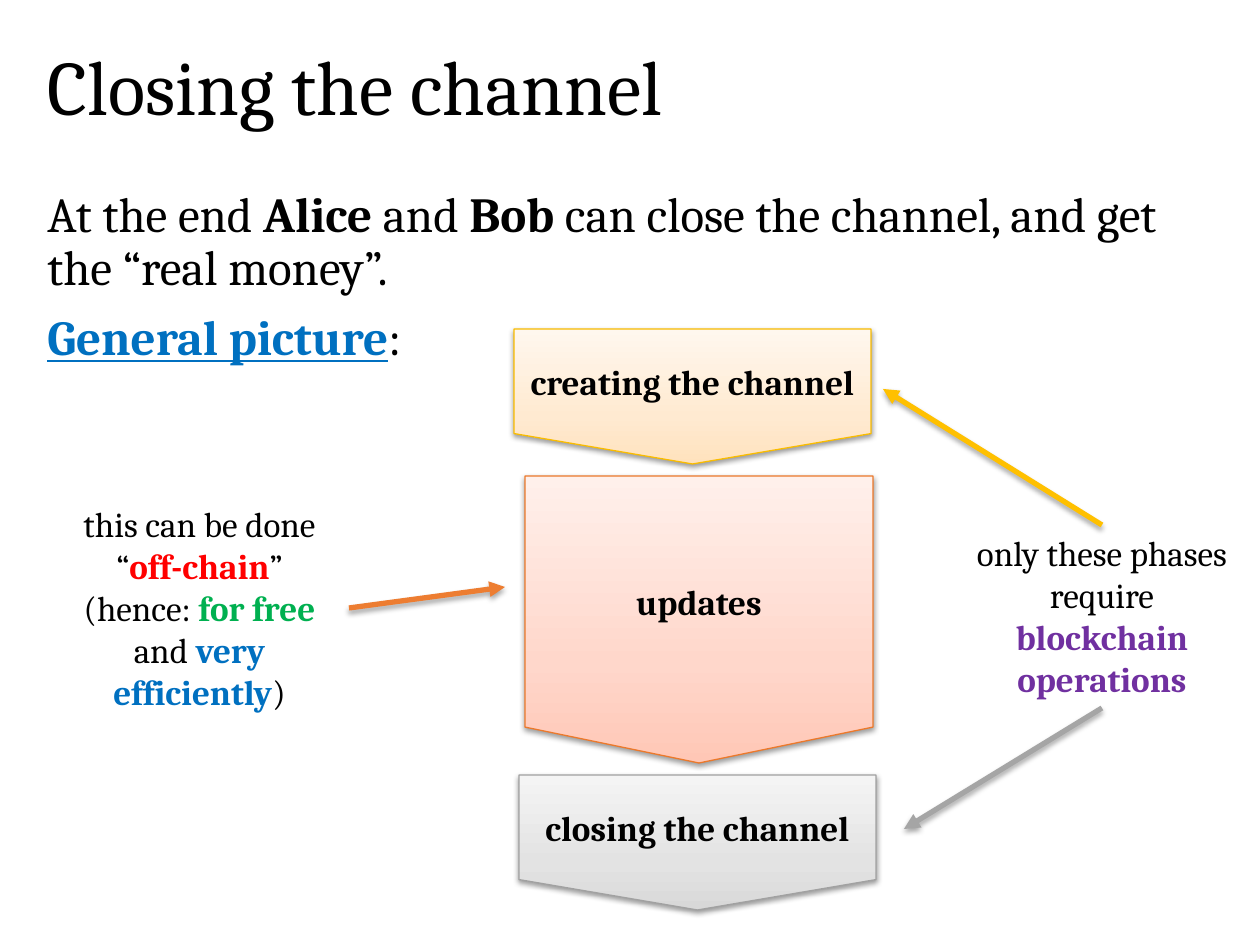
import pptx
import pptx.dml.color
import pptx.enum.shapes
import pptx.enum.text
import pptx.util
from pptx.oxml import parse_xml
from pptx.oxml.ns import nsdecls, qn
from lxml import etree

RGBColor = pptx.dml.color.RGBColor
PP_ALIGN = pptx.enum.text.PP_ALIGN
MSO_ANCHOR = pptx.enum.text.MSO_ANCHOR

FONT = "Cambria"
BLACK = RGBColor(0x00, 0x00, 0x00)
BLUE = RGBColor(0x00, 0x70, 0xC0)
RED = RGBColor(0xFF, 0x00, 0x00)
GREEN = RGBColor(0x00, 0xB0, 0x50)
PURPLE = RGBColor(0x70, 0x30, 0xA0)
GOLD = RGBColor(0xFF, 0xC0, 0x00)
ORANGE = RGBColor(0xED, 0x7D, 0x31)
GRAY = RGBColor(0xA5, 0xA5, 0xA5)
GOLD_EDGE = RGBColor(0xF9, 0xBC, 0x00)
ORANGE_EDGE = RGBColor(0xEC, 0x79, 0x2B)
GRAY_EDGE = RGBColor(0xA1, 0xA1, 0xA1)
GOLD_TINTS = [RGBColor(0xFF, 0xE2, 0xBD), RGBColor(0xFF, 0xEA, 0xD1), RGBColor(0xFF, 0xF7, 0xEE)]
ORANGE_TINTS = [RGBColor(0xFF, 0xC7, 0xB6), RGBColor(0xFF, 0xD7, 0xCB), RGBColor(0xFF, 0xF0, 0xEB)]
GRAY_TINTS = [RGBColor(0xD8, 0xD8, 0xD8), RGBColor(0xE3, 0xE3, 0xE3), RGBColor(0xF4, 0xF4, 0xF4)]
TINT_STOPS = [0, 35, 100]


def px(length):
    return round(length * 914400 / 126)


def write_runs(paragraph, parts, size):
    """Each part is (text, color); coloured and bold parts pass bold as a third item."""
    for text, color, *bold in parts:
        run = paragraph.add_run()
        run.text = text
        run.font.name = FONT
        run.font.size = pptx.util.Pt(size)
        run.font.bold = bool(bold)
        run.font.color.rgb = color


def add_text(slide, box, paragraphs, size, align=PP_ALIGN.LEFT, anchor=MSO_ANCHOR.TOP,
             line_spacing=1.0, space_before=0):
    shape = slide.shapes.add_textbox(*map(px, box))
    text_frame = shape.text_frame
    text_frame.word_wrap = True
    text_frame.vertical_anchor = anchor
    for index, parts in enumerate(paragraphs):
        paragraph = text_frame.add_paragraph() if index else text_frame.paragraphs[0]
        paragraph.alignment = align
        paragraph.line_spacing = line_spacing
        paragraph.space_before = pptx.util.Pt(space_before if index else 0)
        write_runs(paragraph, parts, size)
    return shape


def add_shadow(shape, distance, opacity):
    shape._element.spPr.append(parse_xml(
        f'<a:effectLst {nsdecls("a")}>'
        f'<a:outerShdw blurRad="{pptx.util.Pt(3.1)}" dist="{pptx.util.Pt(distance)}"'
        f' dir="5400000" rotWithShape="0">'
        f'<a:srgbClr val="000000"><a:alpha val="{opacity * 1000}"/></a:srgbClr>'
        f'</a:outerShdw></a:effectLst>'))


def fill_upward(shape, tints):
    """Three-stop gradient that runs from the bottom edge to the top."""
    shape.fill.gradient()
    gradient = shape._element.spPr.find(qn("a:gradFill"))
    stops = gradient.find(qn("a:gsLst"))
    for stop in list(stops):
        stops.remove(stop)
    for position, tint in zip(TINT_STOPS, tints):
        stop = etree.SubElement(stops, qn("a:gs"), pos=str(position * 1000))
        etree.SubElement(stop, qn("a:srgbClr"), val=str(tint))
    gradient.find(qn("a:lin")).set("ang", "16200000")


def add_phase(slide, box, label, tints, edge, head):
    shape = slide.shapes.add_shape(pptx.enum.shapes.MSO_SHAPE.DOWN_ARROW, *map(px, box))
    shape.adjustments[0] = 1
    shape.adjustments[1] = head
    fill_upward(shape, tints)
    shape.line.color.rgb = edge
    shape.line.width = pptx.util.Pt(0.75)
    add_shadow(shape, 1.6, 38)
    text_frame = shape.text_frame
    text_frame.word_wrap = True
    text_frame.vertical_anchor = MSO_ANCHOR.MIDDLE
    paragraph = text_frame.paragraphs[0]
    paragraph.alignment = PP_ALIGN.CENTER
    write_runs(paragraph, [(label, BLACK, True)], 20)


def add_arrow(slide, start, end, color):
    connector = slide.shapes.add_connector(
        pptx.enum.shapes.MSO_CONNECTOR.STRAIGHT, *map(px, start + end))
    connector.line.color.rgb = color
    connector.line.width = pptx.util.Pt(3)
    etree.SubElement(connector.line._get_or_add_ln(), qn("a:tailEnd"), type="triangle")
    add_shadow(connector, 1.8, 35)


def add_title(slide, box):
    add_text(slide, box, [[("Closing the channel", BLACK)]], 44,
             anchor=MSO_ANCHOR.MIDDLE, line_spacing=0.9)


def add_introduction(slide, box):
    shape = add_text(slide, box, [
        [("At the end ", BLACK), ("Alice", BLACK, True), (" and ", BLACK), ("Bob", BLACK, True),
         (" can close the channel, and get the “real money”.", BLACK)],
        [("General picture", BLUE, True), (":", BLACK)],
    ], 28, line_spacing=0.9, space_before=10)
    shape.text_frame.paragraphs[1].runs[0].font.underline = True


def add_phases(slide, box):
    left, top, _, _ = box
    add_phase(slide, (left, top, 357, 135), "creating the channel", GOLD_TINTS, GOLD_EDGE, 0.225)
    add_phase(slide, (left + 11, top + 147, 348, 287), "updates", ORANGE_TINTS, ORANGE_EDGE, 0.125)
    add_phase(slide, (left + 5, top + 446, 357, 135), "closing the channel",
              GRAY_TINTS, GRAY_EDGE, 0.225)


def add_blockchain_note(slide, box):
    left, top, width, height = box
    add_text(slide, box, [[("only these phases require ", BLACK),
                           ("blockchain operations", PURPLE, True)]], 20, PP_ALIGN.CENTER)
    middle = left + width // 2
    add_arrow(slide, (middle, top), (left - 70, top - 136), GOLD)
    add_arrow(slide, (middle, top + height), (left - 49, top + height + 121), GRAY)


def add_off_chain_note(slide, box):
    left, top, width, height = box
    add_text(slide, box, [[
        ("this can be done “", BLACK), ("off-chain", RED, True), ("” (hence: ", BLACK),
        ("for free ", GREEN, True), ("and ", BLACK), ("very efficiently", BLUE, True),
        (")", BLACK)]], 20, PP_ALIGN.CENTER)
    middle = top + height // 2
    add_arrow(slide, (left + width, middle), (left + width + 156, middle - 21), ORANGE)


def main():
    presentation = pptx.Presentation()
    presentation.slide_width = px(1260)
    presentation.slide_height = px(945)
    slide = presentation.slides.add_slide(presentation.slide_layouts[6])
    add_title(slide, (35, 37, 1201, 108))
    add_introduction(slide, (35, 184, 1201, 263))
    add_phases(slide, (514, 329, 362, 581))
    add_blockchain_note(slide, (953, 525, 298, 183))
    add_off_chain_note(slide, (50, 496, 299, 225))
    presentation.save("out.pptx")


if __name__ == "__main__":
    main()
